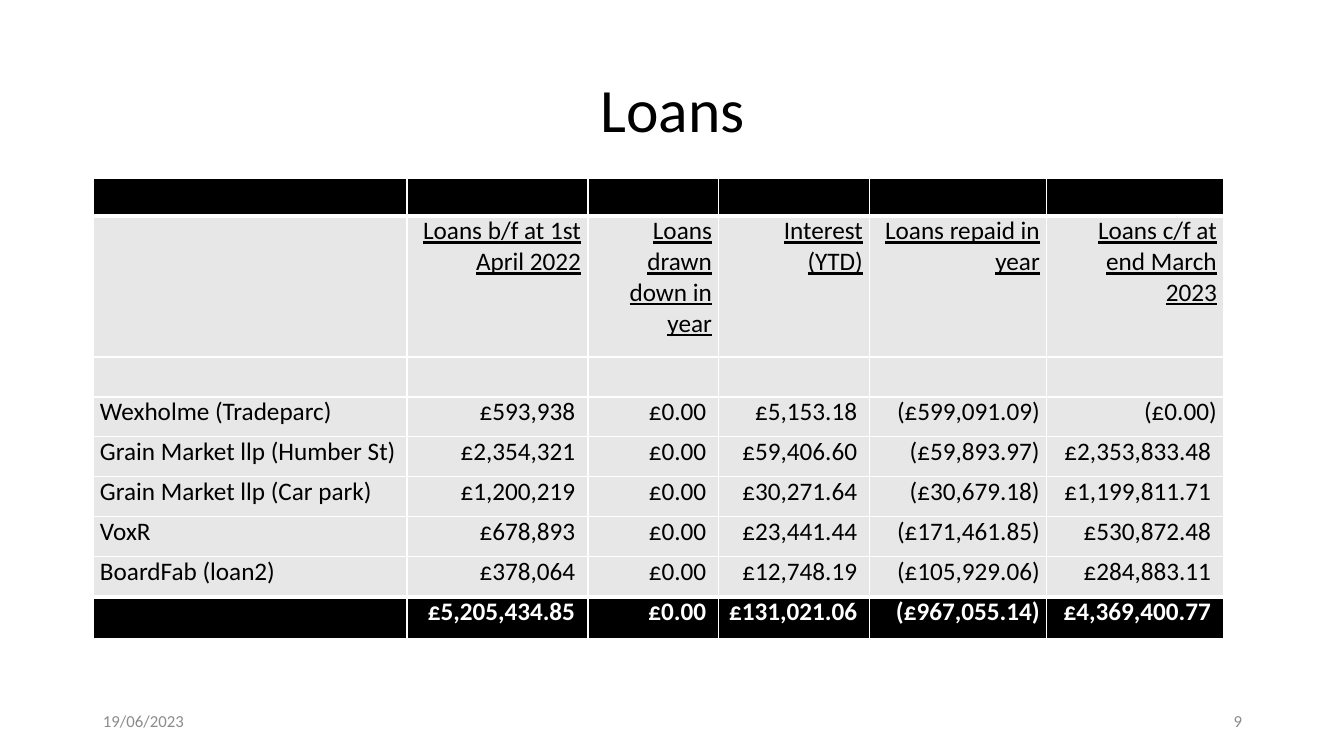
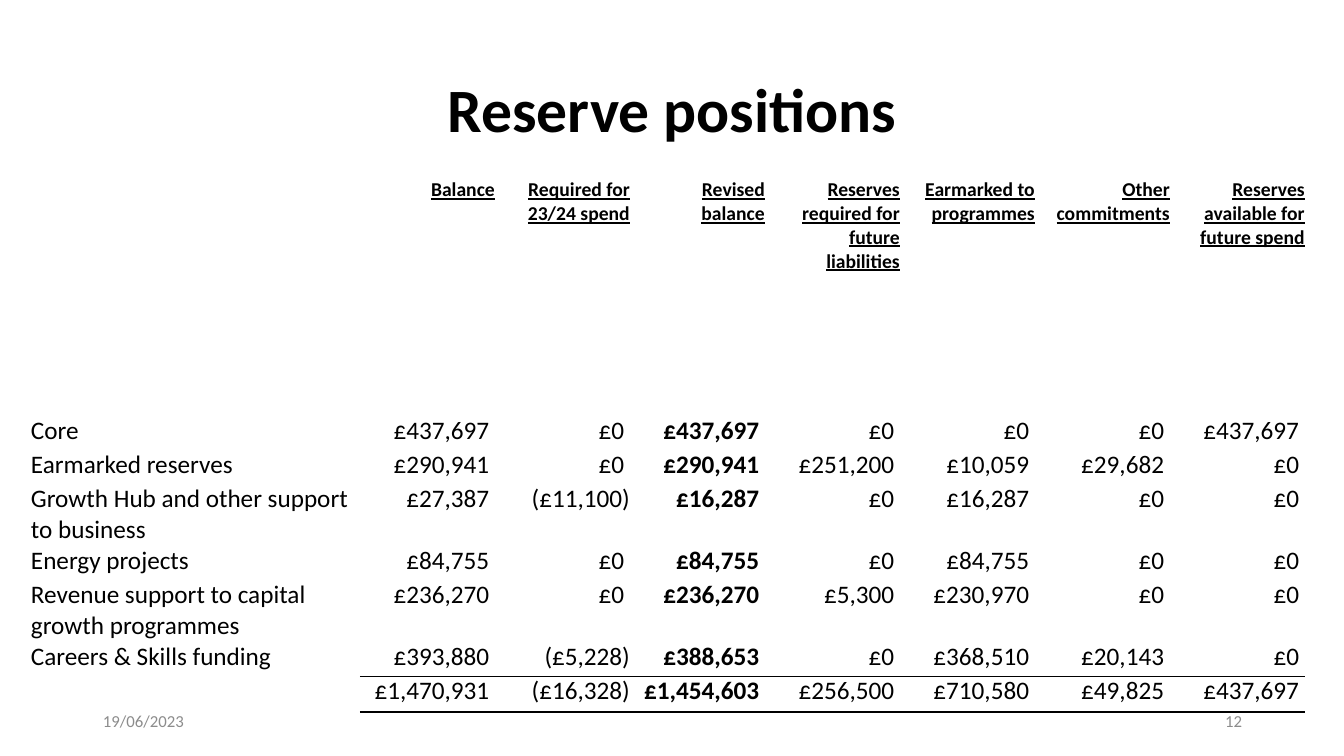
"""Build two finance slides: a loans table and a reserve positions table."""
from lxml import etree
from pptx import Presentation
from pptx.dml.color import RGBColor
from pptx.enum.text import MSO_ANCHOR, PP_ALIGN
from pptx.oxml.ns import qn
from pptx.util import Pt

PX = 9071
LEFT, CENTER, RIGHT = PP_ALIGN.LEFT, PP_ALIGN.CENTER, PP_ALIGN.RIGHT
MIDDLE = MSO_ANCHOR.MIDDLE
FONT = "Calibri"
BLACK, WHITE, PALE, GREY = "000000", "FFFFFF", "E7E7E7", "8C8C8C"
PLAIN_TABLE = "{2D5ABB26-0587-4C30-8999-92F81FD0307C}"

loan_rows = [
    [""] * 6,
    ["", "Loans b/f at 1st April 2022", "Loans drawn down in year", "Interest (YTD)",
     "Loans repaid in year", "Loans c/f at end March 2023"],
    [""] * 6,
    ["Wexholme (Tradeparc)", "£593,938", "£0.00", "£5,153.18", "(£599,091.09)", "(£0.00)"],
    ["Grain Market llp (Humber St)", "£2,354,321", "£0.00", "£59,406.60", "(£59,893.97)",
     "£2,353,833.48"],
    ["Grain Market llp (Car park)", "£1,200,219", "£0.00", "£30,271.64", "(£30,679.18)",
     "£1,199,811.71"],
    ["VoxR", "£678,893", "£0.00", "£23,441.44", "(£171,461.85)", "£530,872.48"],
    ["BoardFab (loan2)", "£378,064", "£0.00", "£12,748.19", "(£105,929.06)", "£284,883.11"],
    ["", "£5,205,434.85", "£0.00", "£131,021.06", "(£967,055.14)", "£4,369,400.77"],
]
reserve_rows = [
    ["", "Balance", "Required for 23/24 spend", "Revised balance",
     "Reserves required for future liabilities", "Earmarked to programmes",
     "Other commitments", "Reserves available for future spend"],
    [""] * 8,
    ["Core", "£437,697", "£0", "£437,697", "£0", "£0", "£0", "£437,697"],
    ["Earmarked reserves", "£290,941", "£0", "£290,941", "£251,200", "£10,059", "£29,682", "£0"],
    ["Growth Hub and other support to business", "£27,387", "(£11,100)", "£16,287", "£0",
     "£16,287", "£0", "£0"],
    ["Energy projects", "£84,755", "£0", "£84,755", "£0", "£84,755", "£0", "£0"],
    ["Revenue support to capital growth programmes", "£236,270", "£0", "£236,270", "£5,300",
     "£230,970", "£0", "£0"],
    ["Careers & Skills funding", "£393,880", "(£5,228)", "£388,653", "£0", "£368,510",
     "£20,143", "£0"],
    ["", "£1,470,931", "(£16,328)", "£1,454,603", "£256,500", "£710,580", "£49,825", "£437,697"],
]
pages = [
    dict(title="Loans", title_bold=False, number="9", rows=loan_rows, left=93,
         widths=[314, 181, 131, 151, 177, 177], heights=[38, 141] + [40] * 6 + [42],
         inset=7, head_row=1, head=dict(underline=True), bands=(0, 8), bold_column=None,
         fill=PALE, line=WHITE, grid=1, rules={1: 3, 8: 3}),
    dict(title="Reserve positions", title_bold=True, number="12", rows=reserve_rows, left=31,
         widths=[329] + [135] * 7, heights=[204, 34, 34, 34, 62, 34, 62, 34, 36],
         inset=0, head_row=0, head=dict(size=14, bold=True, underline=True, indent=8), bands=(),
         bold_column=3, fill=None, line=BLACK, grid=0, rules={8: 0.5, 9: 2}),
]


def write(frame, text, size=18, color=BLACK, bold=False, underline=False, align=LEFT,
          spacing=None, indent=0):
    """Put one formatted paragraph into a text frame."""
    para = frame.paragraphs[0]
    para.alignment = align
    if spacing:
        para.line_spacing = spacing
    if indent:
        para._p.get_or_add_pPr().set("marL", str(indent * PX))
    span = para.add_run()
    span.text = text
    span.font.name = FONT
    span.font.size = Pt(size)
    span.font.bold = bold
    span.font.underline = underline
    span.font.color.rgb = RGBColor.from_string(color)


def draw_edge(cell, side, color, width):
    """Draw one border of a table cell."""
    edge = etree.SubElement(cell._tc.get_or_add_tcPr(), qn("a:ln" + side), w=str(Pt(width)))
    solid = etree.SubElement(edge, qn("a:solidFill"))
    etree.SubElement(solid, qn("a:srgbClr"), val=color)


deck = Presentation()
deck.slide_width, deck.slide_height = 1344 * PX, 756 * PX

for page in pages:
    slide = deck.slides.add_slide(deck.slide_layouts[6])

    footer = dict(size=12, color=GREY)
    labels = [
        (page["title"], (93, 40, 1159, 146),
         dict(size=44, bold=page["title_bold"], align=CENTER, spacing=0.9)),
        ("19/06/2023", (93, 701, 302, 40), footer),
        (page["number"], (950, 701, 302, 40), dict(footer, align=RIGHT)),
    ]
    for text, place, style in labels:
        box = slide.shapes.add_textbox(*(length * PX for length in place))
        box.text_frame.word_wrap = True
        box.text_frame.vertical_anchor = MIDDLE
        write(box.text_frame, text, **style)

    widths, heights, rules, grid = page["widths"], page["heights"], page["rules"], page["grid"]
    table = slide.shapes.add_table(len(heights), len(widths), page["left"] * PX, 178 * PX,
                                   sum(widths) * PX, sum(heights) * PX).table
    table.first_row = table.horz_banding = False
    table._tbl.tblPr.find(qn("a:tableStyleId")).text = PLAIN_TABLE
    for column, width in enumerate(widths):
        table.columns[column].width = width * PX

    for row, values in enumerate(page["rows"]):
        table.rows[row].height = heights[row] * PX
        band = row in page["bands"]
        for column, text in enumerate(values):
            cell = table.cell(row, column)
            cell.margin_left = cell.margin_right = page["inset"] * PX
            cell.margin_top = cell.margin_bottom = 0

            edges = dict(L=grid, R=grid, T=rules.get(row, grid), B=rules.get(row + 1, grid))
            for side, width in edges.items():
                if width and (column or grid):
                    draw_edge(cell, side, page["line"], width)
            if page["fill"]:
                cell.fill.solid()
                cell.fill.fore_color.rgb = RGBColor.from_string(BLACK if band else page["fill"])
            else:
                cell.fill.background()

            if text:
                style = dict(align=RIGHT if column else LEFT, color=WHITE if band else BLACK,
                             bold=band or column == page["bold_column"])
                if row == page["head_row"]:
                    style.update(page["head"])
                write(cell.text_frame, text + " " if text.startswith("£") else text, **style)

deck.save("out.pptx")
